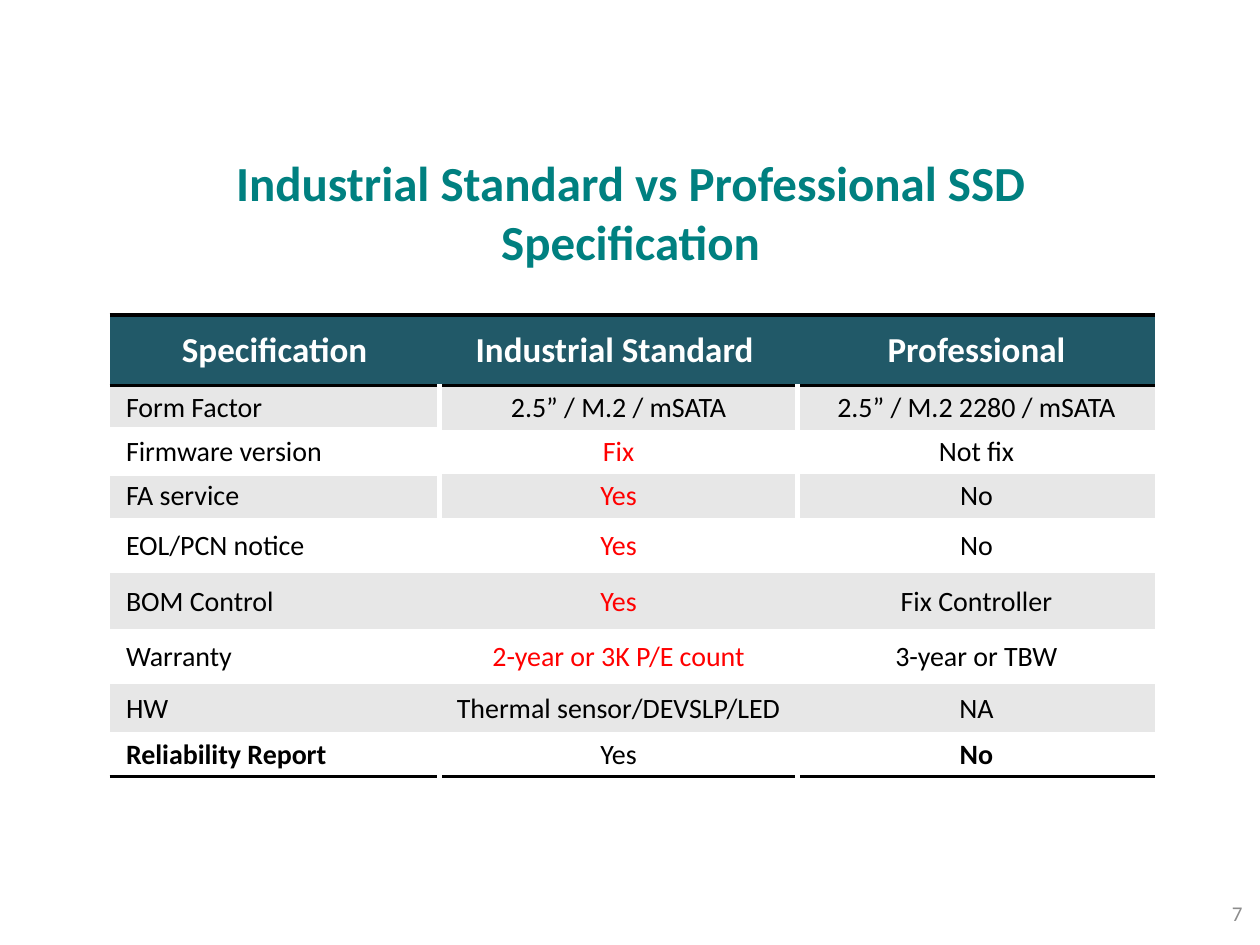
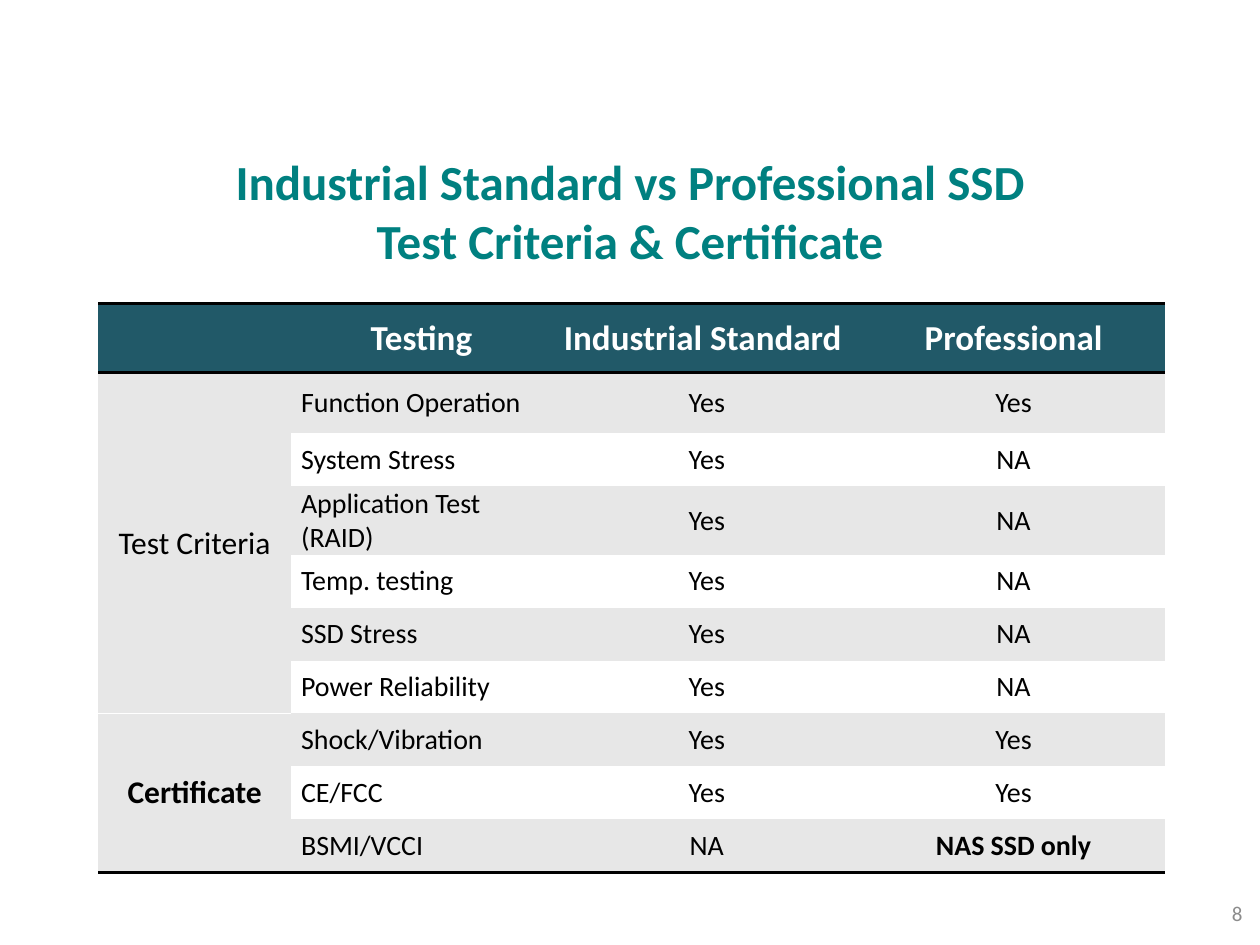
from dataclasses import dataclass
from typing import NamedTuple, Union

from lxml.etree import SubElement
from pptx import Presentation
from pptx.dml.color import RGBColor
from pptx.enum.text import MSO_ANCHOR as Anchor, MSO_AUTO_SIZE as AutoSize, PP_ALIGN as Align
from pptx.oxml.ns import qn
from pptx.util import Inches, Pt

FONT = "Calibri"
TEAL, NAVY, GREY, WHITE = "008080", "215968", "E7E7E7", "FFFFFF"
BLACK, RED, NUMBER_GREY = "000000", "FF0000", "8C8C8C"
PLAIN_STYLE = "{2D5ABB26-0587-4C30-8999-92F81FD0307C}"


class Entry(NamedTuple):
    text: str
    color: str = BLACK
    bold: bool = False


class Border(NamedTuple):
    color: str
    width: float


class Box(NamedTuple):
    left: float
    top: float
    width: float
    height: float


@dataclass
class ComparisonTable:
    left: float
    top: float
    columns: list[float]
    heights: list[float]
    rows: list[list[Union[str, Entry]]]
    inset: float
    label_inset: float
    label_column: int = 0
    gap_rows: tuple[int, ...] = ()
    underlined_labels: tuple[int, ...] = ()
    groups: tuple[tuple[int, int], ...] = ()


@dataclass
class ComparisonSlide:
    title: str
    title_box: Box
    number: int
    table: ComparisonTable


RULE, GAP, GROUP_LINE = Border(BLACK, 2), Border(WHITE, 3), Border(WHITE, 1)
RED_YES = Entry("Yes", RED)
NUMBER_BOX = Box(7.63, 7.05, 2.33, 0.4)

SLIDES = [
    ComparisonSlide(
        "Industrial Standard vs Professional SSD\nSpecification",
        Box(0.13, 1.16, 9.75, 1.51), 7,
        ComparisonTable(
            0.87, 2.5, [2.62, 2.84, 2.84],
            [0.56] + [0.35] * 3 + [0.44] * 3 + [0.38, 0.35],
            [
                ["Specification", "Industrial Standard ", "Professional"],
                ["Form Factor", "2.5” / M.2 / mSATA", "2.5” / M.2 2280 / mSATA"],
                ["Firmware version", Entry("Fix", RED), "Not fix"],
                ["FA service", RED_YES, "No"],
                ["EOL/PCN notice", RED_YES, "No"],
                ["BOM Control", RED_YES, "Fix Controller"],
                ["Warranty", Entry("2-year or 3K P/E count", RED), "3-year or TBW"],
                ["HW", "Thermal sensor/DEVSLP/LED", "NA"],
                [Entry("Reliability Report", bold=True), "Yes", Entry("No", bold=True)],
            ],
            inset=0.01, label_inset=0.13,
            gap_rows=(1, 2, 3, 4, 6, 8), underlined_labels=(1, 2))),
    ComparisonSlide(
        "Industrial Standard vs Professional SSD\nTest Criteria & Certificate",
        Box(1.22, 1.15, 7.56, 1.04), 8,
        ComparisonTable(
            0.78, 2.41, [1.53, 2.07, 2.46, 2.41], [0.55, 0.48] + [0.42] * 8,
            [
                ["", "Testing", "Industrial Standard ", "Professional"],
                ["Test Criteria", "Function Operation", "Yes", "Yes"],
                ["", "System Stress", "Yes", "NA"],
                ["", "Application Test (RAID)", "Yes", "NA"],
                ["", "Temp. testing", "Yes", "NA"],
                ["", "SSD Stress", "Yes", "NA"],
                ["", "Power Reliability", "Yes", "NA"],
                [Entry("Certificate", bold=True), "Shock/Vibration", "Yes", "Yes"],
                ["", "CE/FCC", "Yes", "Yes"],
                ["", "BSMI/VCCI", "NA", Entry("NAS SSD only", bold=True)],
            ],
            inset=0, label_inset=0.08, label_column=1, groups=((1, 6), (7, 9)))),
]


def rgb(color: str) -> RGBColor:
    """Turn a hex string into a colour."""
    return RGBColor.from_string(color)


def write_text(frame, text: str, *, size: float, color: str = BLACK,
               bold: bool = False, align: Align = Align.CENTER) -> None:
    """Write one paragraph per line in the given format."""
    frame.text = text
    for paragraph in frame.paragraphs:
        paragraph.alignment = align
        for run in paragraph.runs:
            run.font.name, run.font.size, run.font.bold = FONT, Pt(size), bold
            run.font.color.rgb = rgb(color)


def draw_borders(cell, borders: dict[str, Border]) -> None:
    """Add the given borders to a cell in schema order."""
    properties = cell._tc.get_or_add_tcPr()
    for side in "LRTB":
        if side in borders:
            border = borders[side]
            line = SubElement(properties, qn(f"a:ln{side}"), w=str(Pt(border.width)))
            fill = SubElement(line, qn("a:solidFill"))
            SubElement(fill, qn("a:srgbClr"), val=border.color)


def find_borders(design: ComparisonTable, row: int, column: int) -> dict[str, Border]:
    """Work out which borders a cell has."""
    borders = {}
    last_row = len(design.rows) - 1
    if row in design.gap_rows:
        if column > 0:
            borders["L"] = GAP
        if column < len(design.columns) - 1:
            borders["R"] = GAP
    if row == 0:
        borders["T"] = RULE
    if column == 0 and row in design.underlined_labels:
        borders["B"] = GAP
    if column == 0:
        for first, last in design.groups:
            if row == first and first > 1:
                borders["T"] = GROUP_LINE
            if first <= row <= last:
                borders["B"] = RULE if last == last_row else GROUP_LINE
    if row in (0, last_row):
        borders["B"] = RULE
    return borders


def format_cell(cell, design: ComparisonTable, row: int, column: int) -> None:
    """Fill, frame and write one table cell."""
    value = design.rows[row][column]
    entry = value if isinstance(value, Entry) else Entry(value)
    is_group = column < design.label_column
    is_label = row > 0 and column == design.label_column
    draw_borders(cell, find_borders(design, row, column))
    cell.fill.solid()
    body_fill = GREY if row % 2 or is_group else WHITE
    cell.fill.fore_color.rgb = rgb(body_fill if row else NAVY)
    cell.vertical_anchor = Anchor.MIDDLE
    cell.margin_left = Inches(design.label_inset if is_label else design.inset)
    cell.margin_right = cell.margin_top = Inches(design.inset)
    cell.margin_bottom = 0
    if row == 0:
        write_text(cell.text_frame, entry.text, size=20, color=WHITE, bold=True)
    elif entry.text:
        write_text(cell.text_frame, entry.text, size=18 if is_group else 16,
                   color=entry.color, bold=entry.bold,
                   align=Align.LEFT if is_label else Align.CENTER)


def add_comparison_table(slide, design: ComparisonTable) -> None:
    """Draw a comparison table with its merged group cells."""
    table = slide.shapes.add_table(
        len(design.heights), len(design.columns), Inches(design.left), Inches(design.top),
        Inches(sum(design.columns)), Inches(sum(design.heights))).table
    table.first_row = table.horz_banding = False
    table._tbl.tblPr.find(qn("a:tableStyleId")).text = PLAIN_STYLE
    for column, width in zip(table.columns, design.columns):
        column.width = Inches(width)
    for row, height in zip(table.rows, design.heights):
        row.height = Inches(height)
    for first, last in design.groups:
        table.cell(first, 0).merge(table.cell(last, 0))
    for row in range(len(design.heights)):
        for column in range(len(design.columns)):
            format_cell(table.cell(row, column), design, row, column)


def add_title(slide, text: str, box: Box) -> None:
    """Place and format the title placeholder."""
    title = slide.shapes.title
    title.left, title.top, title.width, title.height = map(Inches, box)
    frame = title.text_frame
    frame.auto_size = AutoSize.NONE
    frame.vertical_anchor = Anchor.TOP
    write_text(frame, text, size=28, color=TEAL, bold=True)


def add_slide_number(slide, number: int) -> None:
    """Write the slide number at the bottom right."""
    frame = slide.shapes.add_textbox(*map(Inches, NUMBER_BOX)).text_frame
    frame.word_wrap = True
    frame.vertical_anchor = Anchor.MIDDLE
    write_text(frame, str(number), size=12, color=NUMBER_GREY, align=Align.RIGHT)


def main() -> None:
    """Build and save the presentation."""
    presentation = Presentation()
    presentation.slide_width, presentation.slide_height = Inches(10), Inches(7.5)
    title_only = presentation.slide_layouts.get_by_name("Title Only")
    for content in SLIDES:
        slide = presentation.slides.add_slide(title_only)
        add_comparison_table(slide, content.table)
        add_title(slide, content.title, content.title_box)
        add_slide_number(slide, content.number)
    presentation.save("out.pptx")


if __name__ == "__main__":
    main()
